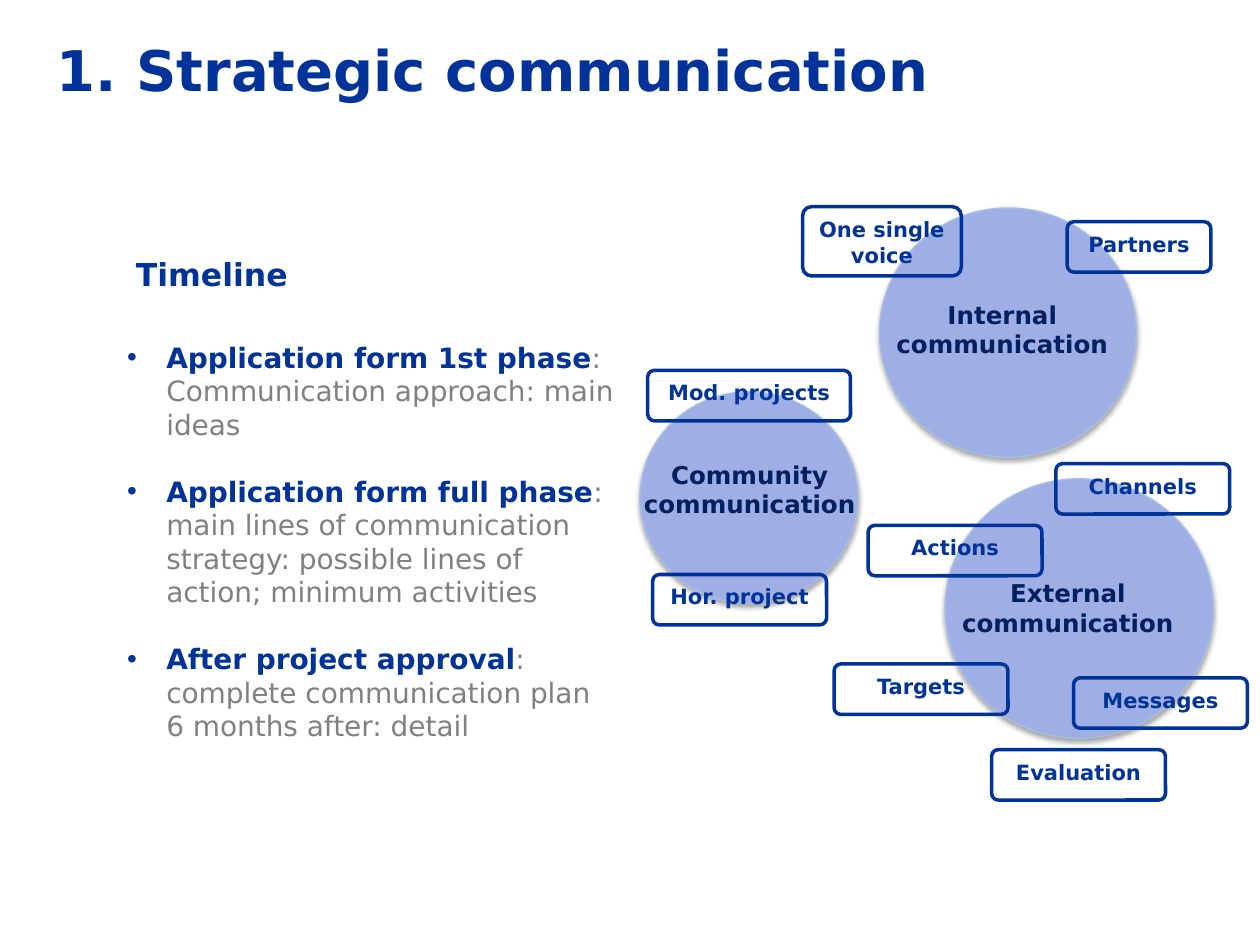
import pptx
import pptx.util
import pptx.dml.color
import pptx.enum.shapes
import pptx.enum.text
import pptx.oxml
import pptx.oxml.ns

Inches = pptx.util.Inches
Pt = pptx.util.Pt
RGB = pptx.dml.color.RGBColor
SHAPE = pptx.enum.shapes.MSO_SHAPE
ALIGN = pptx.enum.text.PP_ALIGN
ANCHOR = pptx.enum.text.MSO_ANCHOR
FIT = pptx.enum.text.MSO_AUTO_SIZE

BLUE = RGB(0x00, 0x33, 0x99)
NAVY = RGB(0x00, 0x20, 0x60)
GREY = RGB(0x80, 0x80, 0x80)
DISC = RGB(0x9F, 0xAE, 0xE5)
EDGE = RGB(0xA5, 0xC0, 0xE1)
FONT = "DejaVu Sans"

STEPS = [
    ("Application form 1st phase", ": Communication approach: main ideas"),
    ("Application form full phase",
     ": main lines of communication strategy: possible lines of action; minimum activities"),
    ("After project approval", ": complete communication plan 6 months after: detail"),
]
DISCS = [
    ("Internal\vcommunication", (6.98, 1.65, 2.04, 1.98), (6.89, 2.33, 2.13, 0.6)),
    ("Community\vcommunication", (5.08, 3.11, 1.73, 1.68), (4.96, 3.6, 1.98, 0.6)),
    ("External communication", (7.5, 3.8, 2.13, 2.06), (7.47, 4.54, 2.01, 0.51)),
]
TAGS = [
    ("Targets", (6.62, 5.27, 1.38, 0.4)),
    ("Evaluation", (7.87, 5.95, 1.38, 0.4)),
    ("Messages", (8.52, 5.38, 1.38, 0.4)),
    ("Channels", (8.38, 3.68, 1.38, 0.4)),
    ("Partners", (8.47, 1.76, 1.14, 0.4)),
    ("One single voice", (6.37, 1.64, 1.26, 0.55)),
    ("Actions", (6.89, 4.17, 1.38, 0.4)),
    ("Hor. project", (5.18, 4.56, 1.38, 0.4)),
    ("Mod. projects", (5.14, 2.94, 1.61, 0.4)),
]
SHADOW = (
    '<a:effectLst %s><a:outerShdw blurRad="%d" dist="%d" dir="5400000" rotWithShape="0">'
    '<a:srgbClr val="000000"><a:alpha val="35000"/></a:srgbClr></a:outerShdw></a:effectLst>'
    % (pptx.oxml.ns.nsdecls("a"), Pt(3.1), Pt(1.8))
)


def area(box):
    """Turn a box in inches into lengths."""
    return [Inches(side) for side in box]


def style(run, size, color, bold=True):
    """Format one run."""
    font = run.font
    font.name, font.size, font.bold = FONT, Pt(size), bold
    font.color.rgb = color


def fill(frame, text, size, color, align=ALIGN.CENTER):
    """Put one formatted paragraph in a frame."""
    frame.text = text
    para = frame.paragraphs[0]
    para.alignment = align
    for run in para.runs:
        style(run, size, color)


def place(shape, box):
    """Move a placeholder to its box."""
    shape.left, shape.top, shape.width, shape.height = area(box)
    shape.text_frame.auto_size = FIT.NONE


def head(slide, box):
    """Fill the title."""
    title = slide.shapes.title
    place(title, box)
    title.text_frame.vertical_anchor = ANCHOR.MIDDLE
    fill(title.text_frame, "1. Strategic communication", 32, BLUE, ALIGN.LEFT)


def label(slide, box):
    """Add the heading above the list."""
    frame = slide.shapes.add_textbox(*area(box)).text_frame
    frame.word_wrap = False
    fill(frame, "Timeline", 18, BLUE, ALIGN.LEFT)
    frame.paragraphs[0].line_spacing = 0.9


def steps(slide, box):
    """Fill the list of phases."""
    body = slide.placeholders[1]
    place(body, box)
    frame = body.text_frame
    frame.vertical_anchor = ANCHOR.TOP
    for i, (name, note) in enumerate(STEPS):
        para = frame.add_paragraph() if i else frame.paragraphs[0]
        props = para._p.get_or_add_pPr()
        props.set("marL", str(Inches(0.31)))
        props.set("indent", str(-Inches(0.31)))
        para.space_before = Pt(19 if i else 0)
        for text, color, bold in ((name, BLUE, True), (note, GREY, False)):
            run = para.add_run()
            run.text = text
            style(run, 16, color, bold)


def disc(slide, text, box, inner):
    """Add a shaded circle with its caption."""
    shape = slide.shapes.add_shape(SHAPE.OVAL, *area(box))
    shape.fill.solid()
    shape.fill.fore_color.rgb = DISC
    shape.line.color.rgb = EDGE
    shape.line.width = Pt(0.75)
    shape._element.spPr.append(pptx.oxml.parse_xml(SHADOW))
    frame = slide.shapes.add_textbox(*area(inner)).text_frame
    frame.word_wrap = True
    fill(frame, text, 14, NAVY)


def tag(slide, text, box):
    """Add an outlined label."""
    shape = slide.shapes.add_shape(SHAPE.ROUNDED_RECTANGLE, *area(box))
    shape.adjustments[0] = 0.13
    shape.shadow.inherit = False
    shape.fill.background()
    shape.line.color.rgb = BLUE
    shape.line.width = Pt(2)
    frame = shape.text_frame
    frame.word_wrap = True
    frame.vertical_anchor = ANCHOR.TOP
    frame.margin_left = frame.margin_right = Inches(0.05)
    frame.margin_top = Inches(0.06)
    fill(frame, text, 12, BLUE)


def main():
    """Build and save the slide."""
    deck = pptx.Presentation()
    deck.slide_width, deck.slide_height = Inches(10), Inches(7.5)
    slide = deck.slides.add_slide(deck.slide_layouts[1])
    head(slide, (0.35, -0.08, 10.87, 1.25))
    label(slide, (0.98, 2.01, 1.42, 0.37))
    steps(slide, (0.91, 2.65, 4.09, 3.4))
    for item in DISCS:
        disc(slide, *item)
    for item in TAGS:
        tag(slide, *item)
    deck.save("out.pptx")


if __name__ == "__main__":
    main()
